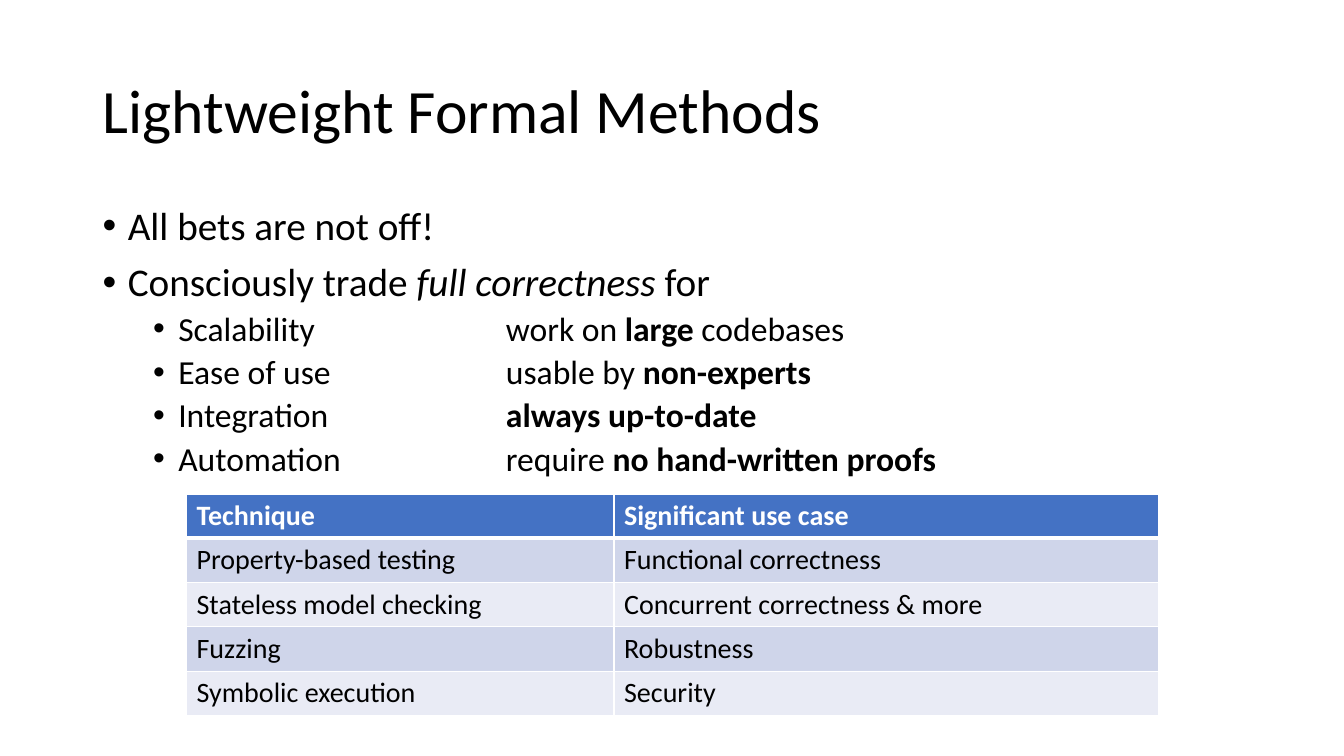
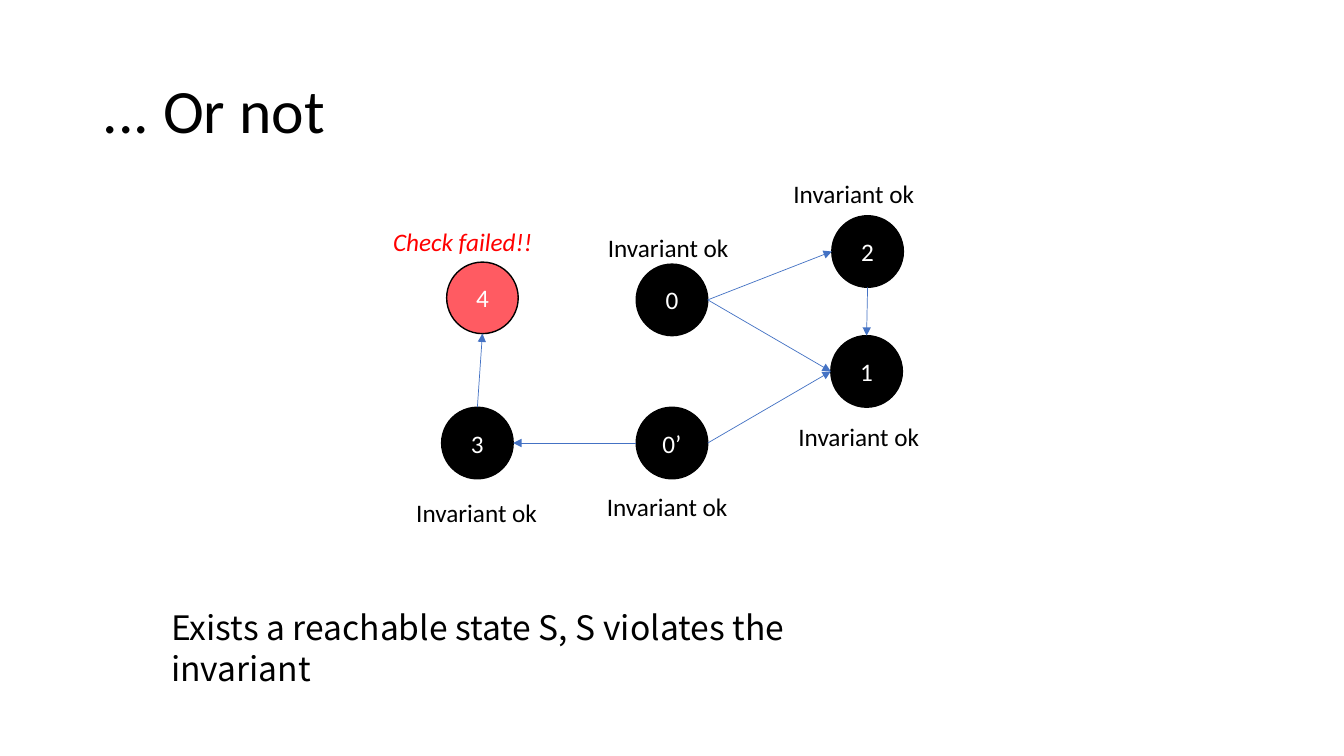
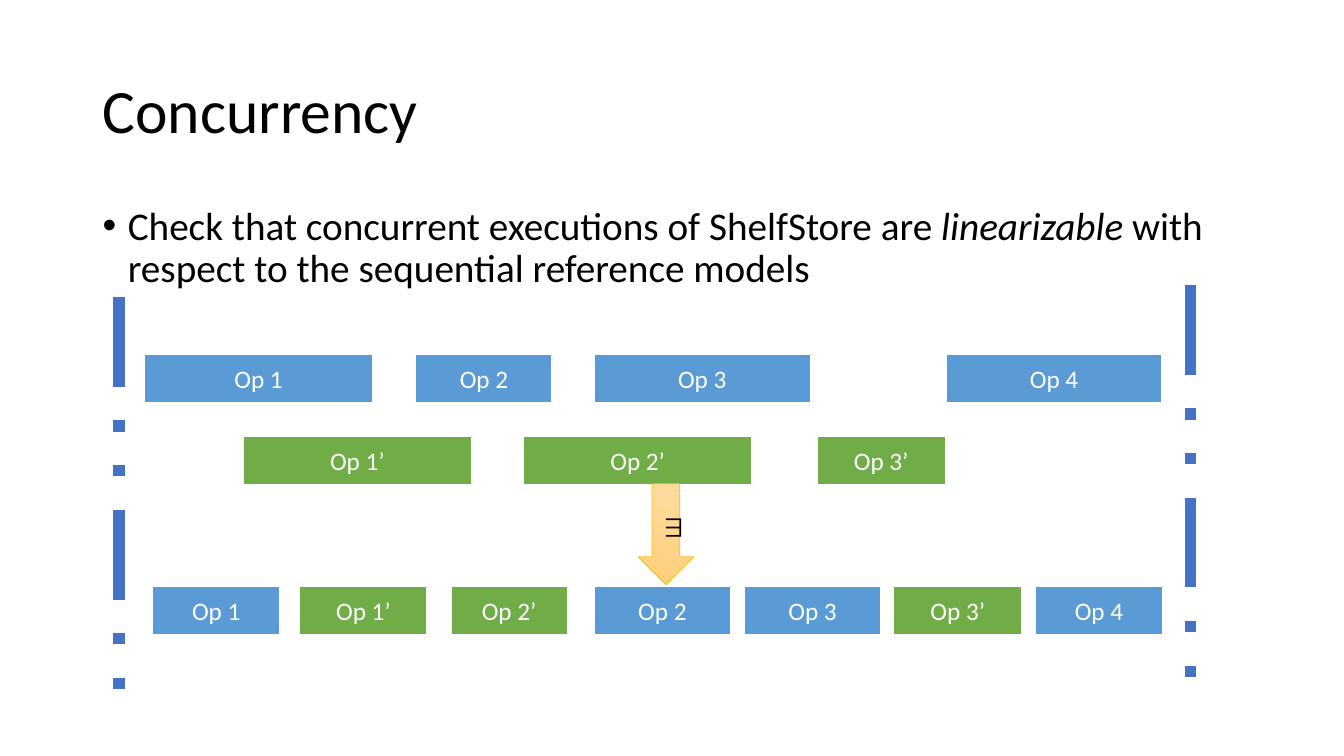
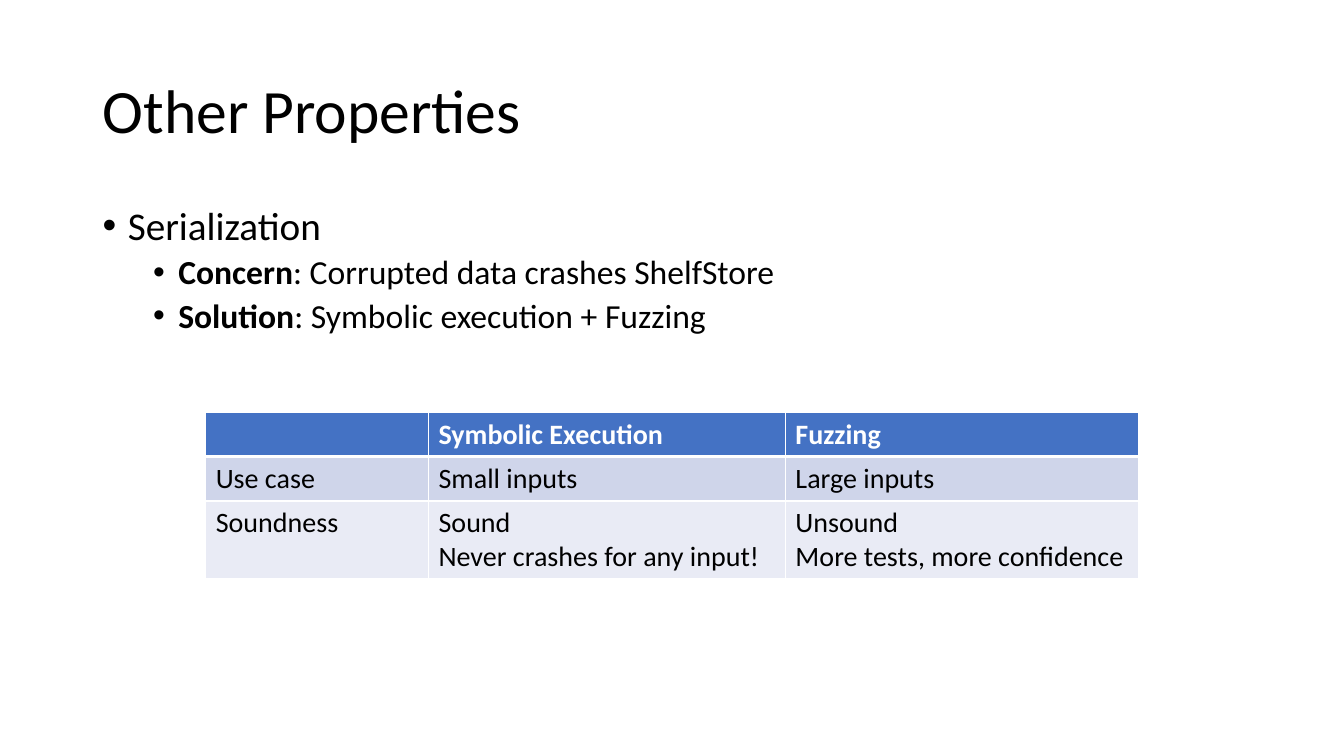
from dataclasses import dataclass

from lxml.etree import SubElement
from pptx import Presentation
from pptx.dml.color import RGBColor
from pptx.enum.dml import MSO_LINE
from pptx.enum.shapes import MSO_CONNECTOR, MSO_SHAPE
from pptx.enum.text import MSO_ANCHOR, PP_ALIGN
from pptx.oxml.ns import qn
from pptx.shapes.autoshape import Shape
from pptx.shapes.connector import Connector
from pptx.slide import Slide
from pptx.table import _Cell as Cell
from pptx.text.text import TextFrame, _Paragraph as Par
from pptx.util import Emu, Pt

PX = 9144
WIDE, HIGH = 1333, 750
FONT, WIDE_FONT = "Calibri", "Noto Sans CJK SC"
BLACK, WHITE, RED = "000000", "FFFFFF", "FF0000"
BLUE, SKY, GREEN = "4472C4", "5B9BD5", "70AD47"
ROSE, GOLD = "FF5B62", "FFC000"
BANDS = ("CFD5EA", "E9EBF5")
FADE = ("FFDB9E", "FFD07C")
LEFT, SPAN = 92, 1150
BALL, BAR = 71, 49
SITES = {"top": (0, 0.5, 0), "left": (2, 0, 0.5), "low": (4, 0.5, 1), "right": (6, 1, 0.5)}


@dataclass(frozen=True)
class Box:
    """A place on the slide in px."""
    x: int
    y: int
    w: int
    h: int


@dataclass(frozen=True)
class Bit:
    """A run of text, bold or italic if so marked."""
    text: str
    bold: bool = False
    slant: bool = False


@dataclass(frozen=True)
class Point:
    """A bullet point made of runs at one level."""
    bits: tuple[Bit, ...]
    level: int = 0


@dataclass(frozen=True)
class Node:
    """A state of the graph."""
    name: str
    x: int
    y: int
    fill: str = BLACK


@dataclass(frozen=True)
class Edge:
    """An arrow between sides of two states."""
    start: str
    out: str
    end: str
    into: str


@dataclass(frozen=True)
class Note:
    """A label beside a state."""
    x: int
    y: int
    w: int = 147
    text: str = "Invariant ok"
    color: str = BLACK
    slant: bool = False


@dataclass(frozen=True)
class Step:
    """A block in a history of operations."""
    name: str
    x: int
    w: int


def px(count: float) -> Emu:
    """Turn px into EMU."""
    return Emu(round(count * PX))


def rgb(code: str) -> RGBColor:
    """Turn a hex string into a colour."""
    return RGBColor.from_string(code)


def place(box: Box) -> tuple[Emu, ...]:
    """Give the four lengths of a box."""
    return px(box.x), px(box.y), px(box.w), px(box.h)


def write(par: Par, bit: Bit, size: int, color: str = BLACK, face: str = FONT) -> None:
    """Add one run to a paragraph."""
    run = par.add_run()
    run.text = bit.text
    font = run.font
    font.name, font.size = face, Pt(size)
    font.bold, font.italic = bit.bold, bit.slant
    font.color.rgb = rgb(color)


def frame(slide: Slide, box: Box, wrap: bool = True) -> TextFrame:
    """Add an empty text box."""
    text = slide.shapes.add_textbox(*place(box)).text_frame
    text.word_wrap = wrap
    return text


def title(slide: Slide, words: str) -> None:
    """Add the slide title."""
    text = frame(slide, Box(LEFT, 40, SPAN, 145))
    text.vertical_anchor = MSO_ANCHOR.MIDDLE
    par = text.paragraphs[0]
    par.line_spacing = 0.9
    write(par, Bit(words), 44)


def body(slide: Slide, points: list[Point], high: int = 476) -> None:
    """Add the bullet points."""
    text = frame(slide, Box(LEFT, 200, SPAN, high))
    for num, point in enumerate(points):
        par = text.add_paragraph() if num else text.paragraphs[0]
        par.level = point.level
        par.line_spacing = 0.9
        par.space_before = Pt(5 if point.level else 10)
        props = par._p.get_or_add_pPr()
        props.set("marL", str(px(25 + 50 * point.level)))
        props.set("indent", str(px(-25)))
        props.set("defTabSz", str(px(100)))
        SubElement(props, qn("a:buFont"), typeface="Arial")
        SubElement(props, qn("a:buChar"), char="•")
        for bit in point.bits:
            write(par, bit, 24 if point.level else 28)


def shape(slide: Slide, kind: MSO_SHAPE, box: Box, edge: str, thick: float,
          words: str, color: str = WHITE, face: str = FONT) -> Shape:
    """Add an outlined shape with centred text."""
    item = slide.shapes.add_shape(kind, *place(box))
    item.shadow.inherit = False
    item.line.color.rgb = rgb(edge)
    item.line.width = Pt(thick)
    text = item.text_frame
    text.vertical_anchor = MSO_ANCHOR.MIDDLE
    par = text.paragraphs[0]
    par.alignment = PP_ALIGN.CENTER
    write(par, Bit(words), 18, color, face)
    return item


def paint(item: Shape | Cell, color: str) -> None:
    """Fill a shape or cell with one colour."""
    item.fill.solid()
    item.fill.fore_color.rgb = rgb(color)


def line(slide: Slide, start: tuple[Emu, Emu], end: tuple[Emu, Emu], thick: float) -> Connector:
    """Add a straight blue line."""
    item = slide.shapes.add_connector(MSO_CONNECTOR.STRAIGHT, *start, *end)
    item.line.color.rgb = rgb(BLUE)
    item.line.width = Pt(thick)
    SubElement(item._element.spPr, qn("a:effectLst"))
    return item


def side(ball: Shape, name: str) -> tuple[Emu, Emu]:
    """Find the middle of one side of a ball."""
    _, across, down = SITES[name]
    return Emu(int(ball.left + across * ball.width)), Emu(int(ball.top + down * ball.height))


def link(slide: Slide, balls: dict[str, Shape], edge: Edge) -> None:
    """Join two balls by an arrow."""
    start, end = balls[edge.start], balls[edge.end]
    item = line(slide, side(start, edge.out), side(end, edge.into), 0.5)
    SubElement(item._element.spPr.find(qn("a:ln")), qn("a:tailEnd"), type="triangle")
    joint = item._element.nvCxnSpPr.cNvCxnSpPr
    for tag, ball, name in (("a:stCxn", start, edge.out), ("a:endCxn", end, edge.into)):
        SubElement(joint, qn(tag), id=str(ball.shape_id), idx=str(SITES[name][0]))


def rule(cell: Cell, head: bool) -> None:
    """Draw white borders round a cell."""
    props = cell._tc.get_or_add_tcPr()
    for spot, tag in enumerate(("a:lnL", "a:lnR", "a:lnT", "a:lnB")):
        thick = 3 if head and tag == "a:lnB" else 1
        edge = props.makeelement(qn(tag), {"w": str(Pt(thick))})
        SubElement(SubElement(edge, qn("a:solidFill")), qn("a:srgbClr"), val=WHITE)
        props.insert(spot, edge)


def table(slide: Slide, x: int, y: int, cols: list[int], highs: list[int],
          rows: list[list[str]]) -> None:
    """Add a banded table with a blue head."""
    box = Box(x, y, sum(cols), sum(highs))
    grid = slide.shapes.add_table(len(rows), len(cols), *place(box)).table
    for col, wide in zip(grid.columns, cols):
        col.width = px(wide)
    for num, (row, high, words) in enumerate(zip(grid.rows, highs, rows)):
        row.height = px(high)
        head = num == 0
        for cell, entry in zip(row.cells, words):
            paint(cell, BLUE if head else BANDS[(num - 1) % 2])
            rule(cell, head)
            text = cell.text_frame
            for spot, part in enumerate(entry.splitlines()):
                par = text.add_paragraph() if spot else text.paragraphs[0]
                write(par, Bit(part, bold=head), 20, WHITE if head else BLACK)


def methods(slide: Slide) -> None:
    """Build the slide on formal methods."""
    title(slide, "Lightweight Formal Methods")
    body(slide, [
        Point((Bit("All bets are not off!"),)),
        Point((Bit("Consciously trade "), Bit("full correctness ", slant=True), Bit("for"))),
        Point((Bit("Scalability\t\twork on "), Bit("large", True), Bit(" codebases")), 1),
        Point((Bit("Ease of use\t\tusable by "), Bit("non-experts", True)), 1),
        Point((Bit("Integration\t\t"), Bit("always up-to-date", True)), 1),
        Point((Bit("Automation\t\trequire "), Bit("no hand-written proofs", True)), 1),
    ])
    table(slide, 185, 490, [424, 540], [44] * 5, [
        ["Technique", "Significant use case"],
        ["Property-based testing", "Functional correctness"],
        ["Stateless model checking", "Concurrent correctness & more"],
        ["Fuzzing", "Robustness"],
        ["Symbolic execution", "Security"],
    ])


def states(slide: Slide) -> None:
    """Build the slide with the state graph."""
    title(slide, "... Or not")
    nodes = [Node("0", 631, 262), Node("0’", 631, 404), Node("1", 824, 333),
             Node("2", 825, 214), Node("3", 438, 404), Node("4", 443, 260, ROSE)]
    balls: dict[str, Shape] = {}
    for node in nodes:
        ball = shape(slide, MSO_SHAPE.OVAL, Box(node.x, node.y, BALL, BALL), BLACK, 1, node.name)
        paint(ball, node.fill)
        balls[node.name] = ball
    for edge in (Edge("0", "right", "1", "left"), Edge("0", "right", "2", "left"),
                 Edge("0’", "right", "1", "left"), Edge("0’", "left", "3", "right"),
                 Edge("3", "top", "4", "low"), Edge("2", "low", "1", "top")):
        link(slide, balls, edge)
    for note in (Note(593, 226), Note(592, 483), Note(777, 172, 141), Note(782, 413),
                 Note(403, 488), Note(380, 220, 166, "Check failed!!", RED, True)):
        text = frame(slide, Box(note.x, note.y, note.w, 40), wrap=False)
        write(text.paragraphs[0], Bit(note.text, slant=note.slant), 18, note.color)
    par = frame(slide, Box(160, 597, 719, 90)).paragraphs[0]
    par.line_spacing = Pt(29)
    write(par, Bit("Exists a reachable state S, S violates the invariant"), 24, face=WIDE_FONT)


def threads(slide: Slide) -> None:
    """Build the slide on concurrent histories."""
    title(slide, "Concurrency")
    body(slide, [Point((
        Bit("Check that concurrent executions of ShelfStore are "),
        Bit("linearizable", slant=True),
        Bit(" with respect to the sequential reference models"),
    ))])
    lanes = {
        351: [Step("Op 1", 143, 227), Step("Op 2", 412, 136),
              Step("Op 3", 589, 215), Step("Op 4", 938, 215)],
        432: [Step("Op 1’", 241, 227), Step("Op 2’", 519, 227), Step("Op 3’", 810, 128)],
        581: [Step("Op 1", 151, 127), Step("Op 1’", 297, 127), Step("Op 2’", 447, 116),
              Step("Op 2", 589, 136), Step("Op 3", 738, 136), Step("Op 3’", 886, 128),
              Step("Op 4", 1026, 128)],
    }
    for y, steps in lanes.items():
        for step in steps:
            block = shape(slide, MSO_SHAPE.RECTANGLE, Box(step.x, y, step.w, BAR),
                          WHITE, 1.5, step.name)
            paint(block, GREEN if step.name.endswith("’") else SKY)
    arrow = shape(slide, MSO_SHAPE.DOWN_ARROW, Box(633, 480, 55, 100), GOLD, 0.5,
                  "∃", BLACK, WIDE_FONT)
    arrow.fill.gradient()
    arrow.fill.gradient_angle = 270
    for spot, (stop, color) in enumerate(zip(arrow.fill.gradient_stops, FADE)):
        stop.color.rgb = rgb(color)
        stop.position = spot
    for x, y in ((1181, 283), (118, 295)):
        post = line(slide, (px(x), px(y)), (px(x), px(y + 395)), 8)
        post.line.dash_style = MSO_LINE.DASH_DOT_DOT


def others(slide: Slide) -> None:
    """Build the slide on other properties."""
    title(slide, "Other Properties")
    body(slide, [
        Point((Bit("Serialization"),)),
        Point((Bit("Concern", True), Bit(": Corrupted data crashes ShelfStore")), 1),
        Point((Bit("Solution", True), Bit(": Symbolic execution + Fuzzing")), 1),
    ], 145)
    table(slide, 204, 409, [221, 354, 350], [44, 44, 77], [
        ["", "Symbolic Execution", "Fuzzing"],
        ["Use case", "Small inputs", "Large inputs"],
        ["Soundness", "Sound\nNever crashes for any input!", "Unsound\nMore tests, more confidence"],
    ])


def main() -> None:
    """Build and save the slides."""
    deck = Presentation()
    deck.slide_width, deck.slide_height = px(WIDE), px(HIGH)
    for build in (methods, states, threads, others):
        build(deck.slides.add_slide(deck.slide_layouts[6]))
    deck.save("out.pptx")


if __name__ == "__main__":
    main()
